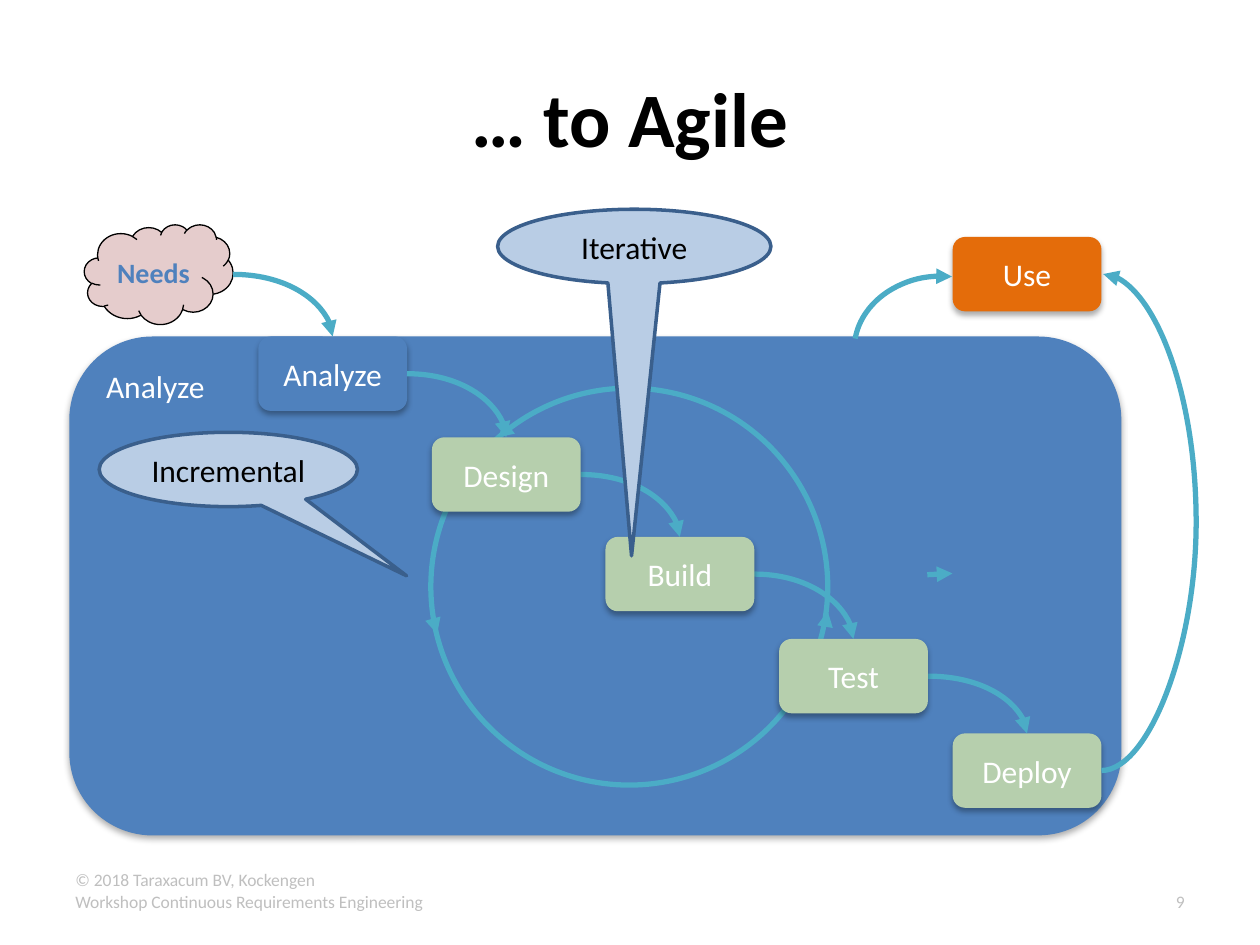
import pptx
import pptx.dml.color
import pptx.enum.shapes
import pptx.enum.text
import pptx.oxml
import pptx.oxml.ns
import pptx.util
from dataclasses import dataclass

Pt = pptx.util.Pt
SHAPE = pptx.enum.shapes.MSO_SHAPE
LINE = pptx.enum.shapes.MSO_CONNECTOR
ALIGN = pptx.enum.text.PP_ALIGN
ANCHOR = pptx.enum.text.MSO_ANCHOR
NS = pptx.oxml.ns.nsdecls("a")


@dataclass(frozen=True)
class Theme:
    font: str = "Calibri"
    blue: str = "4F81BD"
    green: str = "B6CFAD"
    orange: str = "E46C0A"
    teal: str = "4BACC6"
    maroon: str = "800000"
    pale: str = "B9CDE5"
    edge: str = "3A5F8C"
    grey: str = "BFBFBF"
    white: str = "FFFFFF"
    black: str = "000000"
    title: int = 44
    body: int = 18
    needs: int = 16
    footer: int = 10


T = Theme()
BOX_W, BOX_H = 85, 42.5


def rgb(color):
    return pptx.dml.color.RGBColor.from_string(color)


def set_text(sp, text, size, color, align=ALIGN.CENTER, anchor=ANCHOR.MIDDLE,
             bold=False, side=7.2, top=3.6):
    tf = sp.text_frame
    tf.word_wrap = True
    tf.vertical_anchor = anchor
    tf.margin_left = tf.margin_right = Pt(side)
    tf.margin_top = tf.margin_bottom = Pt(top)
    p = tf.paragraphs[0]
    p.alignment = align
    r = p.add_run()
    r.text = text
    r.font.name, r.font.size, r.font.bold = T.font, Pt(size), bold
    r.font.color.rgb = rgb(color)


def add_label(s, box, text, size, color, **style):
    sp = s.shapes.add_textbox(*map(Pt, box))
    set_text(sp, text, size, color, **style)


def add_shape(s, kind, box, fill=None, line=None, width=3.0):
    sp = s.shapes.add_shape(kind, *map(Pt, box))
    sp.shadow.inherit = False
    if fill:
        sp.fill.solid()
        sp.fill.fore_color.rgb = rgb(fill)
    else:
        sp.fill.background()
    if line:
        sp.line.color.rgb = rgb(line)
        sp.line.width = Pt(width)
    else:
        sp.line.fill.background()
    return sp


def add_shadowed(s, box, fill):
    sp = add_shape(s, SHAPE.ROUNDED_RECTANGLE, box, fill)
    effects = sp._element.spPr.find(pptx.oxml.ns.qn("a:effectLst"))
    effects.append(pptx.oxml.parse_xml(
        f'<a:outerShdw {NS} blurRad="{Pt(3.5)}" dist="{Pt(2.2)}" dir="5400000" rotWithShape="0">'
        f'<a:srgbClr val="{T.black}"><a:alpha val="32000"/></a:srgbClr></a:outerShdw>'))
    return sp


def add_step(s, box, text, fill):
    set_text(add_shadowed(s, box, fill), text, T.body, T.white)


def add_arrowhead(sp):
    sp.line._get_or_add_ln().append(pptx.oxml.parse_xml(f'<a:tailEnd {NS} type="triangle"/>'))


def add_arrow(s, start, end, geometry=None, bend=None):
    kind = LINE.CURVE if geometry else LINE.STRAIGHT
    c = s.shapes.add_connector(kind, *map(Pt, (*start, *end)))
    c.line.color.rgb = rgb(T.teal)
    c.line.width = Pt(3)
    add_arrowhead(c)
    c._element.spPr.append(pptx.oxml.parse_xml(f"<a:effectLst {NS}/>"))
    if geometry:
        geom = c._element.spPr.find(pptx.oxml.ns.qn("a:prstGeom"))
        geom.set("prst", geometry)
        if bend:
            geom.get_or_add_avLst().append(pptx.oxml.parse_xml(
                f'<a:gd {NS} name="adj1" fmla="val {round(bend * 100000)}"/>'))


def right_of(box):
    return box[0] + box[2], box[1] + box[3] / 2


def top_of(box):
    return box[0] + box[2] / 2, box[1]


def add_curve(s, source, target):
    add_arrow(s, right_of(source), top_of(target), "curvedConnector2")


def add_needs(s, box):
    sp = add_shape(s, SHAPE.CLOUD, box, T.maroon, T.black, 0.75)
    color = sp._element.spPr.find(".//" + pptx.oxml.ns.qn("a:srgbClr"))
    color.append(pptx.oxml.parse_xml(f'<a:alpha {NS} val="20000"/>'))
    set_text(sp, "Needs", T.needs, T.blue, bold=True, side=0)


def add_cycle(s, box):
    x, y, w, h = box
    add_shape(s, SHAPE.OVAL, box, line=T.teal)
    # Arrowheads along the circle, as offsets from its corner
    for (x1, y1), (x2, y2) in [((44.6, 23), (38.2, 28.1)),
                               ((1.4, 132.5), (3.6, 140.4)),
                               ((225.4, 135.4), (226.8, 127.4))]:
        add_arrow(s, (x + x1, y + y1), (x + x2, y + y2))


def add_callout(s, box, text, tip, side=7.2):
    sp = add_shape(s, SHAPE.OVAL_CALLOUT, box, T.pale, T.edge, 2)
    sp.adjustments[0], sp.adjustments[1] = tip
    set_text(sp, text, T.body, T.black, side=side)


def add_flow(s, box):
    x, y, w, h = box
    panel = add_shadowed(s, box, T.blue)
    set_text(panel, "Analyze", T.body, T.white, ALIGN.LEFT, ANCHOR.TOP)

    # Staircase of steps
    names = ["Analyze", "Design", "Build", "Test", "Deploy"]
    drops = [0, 57.6, 114.5, 172.8, 226.8]
    steps = {name: (x + 108 + 99.2 * i, y + drop, BOX_W, BOX_H)
             for i, (name, drop) in enumerate(zip(names, drops))}
    add_step(s, steps["Analyze"], "Analyze", T.blue)
    add_step(s, steps["Deploy"], "Deploy", T.green)
    for source, target in zip(names[:-1], names[1:]):
        add_curve(s, steps[source], steps[target])

    # Needs leading in, use leading out
    needs = (x + 8.6, y - 64, BOX_W, 57)
    add_needs(s, needs)
    add_curve(s, needs, steps["Analyze"])
    use = (steps["Deploy"][0], y - 56.9, BOX_W, BOX_H)
    add_step(s, use, "Use", T.orange)
    out_x, out_y = right_of(steps["Deploy"])
    add_arrow(s, (out_x, out_y), (out_x + 1, right_of(use)[1]), "curvedConnector3", 54.57)
    arc = add_shape(s, SHAPE.ARC, (x + 448.6, y - 34.5, 100, 83.5), line=T.teal)
    arc.adjustments[0], arc.adjustments[1] = 112.18, 166.78
    add_arrowhead(arc)

    # Iteration circle behind the middle steps
    add_cycle(s, (x + 206.6, y + 29.5, 226.8, 226.8))
    add_arrow(s, (x + 490.3, y + 136.1), (x + 504.7, y + 135.4))
    for name in ("Build", "Design", "Test"):
        add_step(s, steps[name], name, T.green)

    # Callouts
    add_callout(s, (x + 244.8, y - 72.7, 156.2, BOX_H), "Iterative", (-0.01, 4.16), side=0)
    add_callout(s, (x + 17.1, y + 54.7, 147.6, BOX_H), "Incremental", (0.69, 1.43))


def add_footer(s, box):
    x, y, w, h = box
    style = dict(size=T.footer, color=T.grey, anchor=ANCHOR.TOP)
    add_label(s, (x, y, 165.6, 8.6), "© 2018 Taraxacum BV, Kockengen",
              align=ALIGN.LEFT, top=0, **style)
    add_label(s, (x, y + 8.6, 576, h - 8.6), "Workshop Continuous Requirements Engineering",
              align=ALIGN.LEFT, **style)
    add_label(s, (x + w - 70.6, y + 8.6, 70.6, h - 8.6), "9", align=ALIGN.RIGHT, **style)


def main():
    prs = pptx.Presentation()
    prs.slide_width, prs.slide_height = Pt(720), Pt(540)
    s = prs.slides.add_slide(prs.slide_layouts[6])
    add_flow(s, (39.6, 192.3, 601.2, 285.1))
    add_label(s, (36, 21.6, 648, 90), "… to Agile", T.title, T.black, bold=True)
    add_footer(s, (36, 496.8, 648, 37.4))
    prs.save("out.pptx")


if __name__ == "__main__":
    main()
